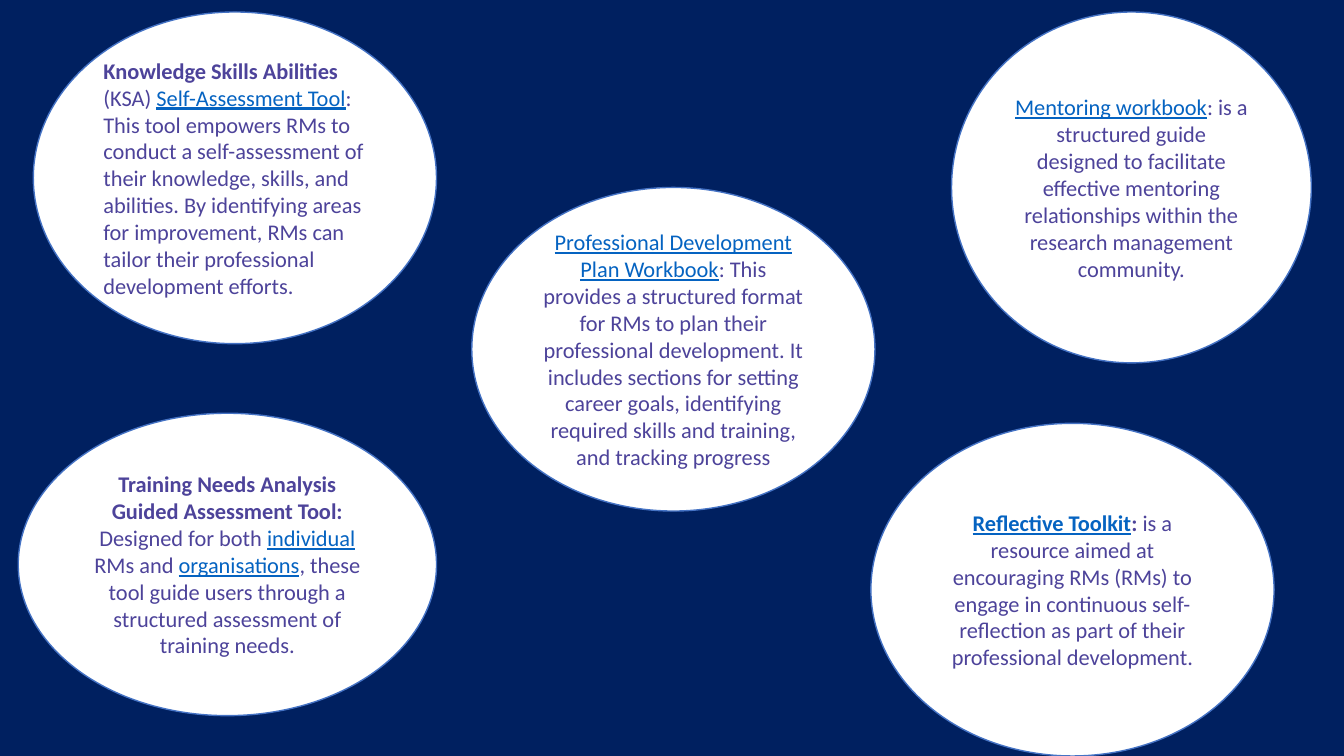
"""Build a slide of five ovals describing professional development tools."""
from dataclasses import dataclass

from pptx import Presentation
from pptx.dml.color import RGBColor
from pptx.enum.shapes import MSO_SHAPE
from pptx.enum.text import MSO_ANCHOR, PP_ALIGN
from pptx.slide import Slide
from pptx.util import Pt

NAVY = "002060"
WHITE = "FFFFFF"
OUTLINE = "4472C4"
PURPLE = "4D439A"
LINK_BLUE = "0563C1"


@dataclass(frozen=True)
class Span:
    text: str
    bold: bool = False
    link: bool = False


@dataclass(frozen=True)
class Oval:
    left: float
    top: float
    width: float
    height: float
    spans: tuple[Span, ...]
    align: PP_ALIGN = PP_ALIGN.CENTER
    space_before: float = 0
    margin_left: float = 7.2


OVALS = (
    Oval(23.8, 8.6, 288, 236.9, (
        Span("Knowledge Skills Abilities ", bold=True),
        Span("(KSA) "),
        Span("Self-Assessment Tool", link=True),
        Span(": This tool empowers RMs to conduct a self-assessment of their "
             "knowledge, skills, and abilities. By identifying areas for "
             "improvement, RMs can tailor their professional development efforts."),
    ), align=PP_ALIGN.LEFT, space_before=16.5, margin_left=7.9),
    Oval(13, 295.2, 298.8, 216, (
        Span("Training Needs Analysis Guided Assessment Tool: ", bold=True),
        Span("Designed for both "),
        Span("individual", link=True),
        Span(" RMs and "),
        Span("organisations", link=True),
        Span(", these tool guide users through a structured assessment of "
             "training needs."),
    )),
    Oval(337, 133.9, 288, 231.1, (
        Span("Professional Development Plan Workbook", link=True),
        Span(": This provides a structured format for RMs to plan their "
             "professional development. It includes sections for setting career "
             "goals, identifying required skills and training, and tracking "
             "progress"),
    )),
    Oval(679.7, 8.6, 257, 250.6, (
        Span("Mentoring workbook", link=True),
        Span(": is a structured guide designed to facilitate effective mentoring "
             "relationships within the research management community."),
    )),
    Oval(622.1, 302.4, 288, 237.6, (
        Span("Reflective Toolkit", bold=True, link=True),
        Span(": ", bold=True),
        Span("is a resource aimed at encouraging RMs (RMs) to engage in "
             "continuous self-reflection as part of their professional "
             "development."),
    )),
)


def color(value: str) -> RGBColor:
    return RGBColor.from_string(value)


def draw_oval(page: Slide, oval: Oval) -> None:
    shape = page.shapes.add_shape(MSO_SHAPE.OVAL, Pt(oval.left), Pt(oval.top),
                                  Pt(oval.width), Pt(oval.height))
    shape.shadow.inherit = False
    shape.fill.solid()
    shape.fill.fore_color.rgb = color(WHITE)
    shape.line.color.rgb = color(OUTLINE)
    shape.line.width = Pt(1)

    frame = shape.text_frame
    frame.word_wrap = True
    frame.vertical_anchor = MSO_ANCHOR.MIDDLE
    frame.margin_left = Pt(oval.margin_left)
    para = frame.paragraphs[0]
    para.alignment = oval.align
    para.space_before = Pt(oval.space_before)
    for span in oval.spans:
        run = para.add_run()
        run.text = span.text
        run.font.name = "Calibri"
        run.font.size = Pt(16)
        run.font.bold = span.bold
        run.font.underline = span.link
        run.font.color.rgb = color(LINK_BLUE if span.link else PURPLE)


def main() -> None:
    deck = Presentation()
    deck.slide_width = Pt(960)
    deck.slide_height = Pt(540)
    page = deck.slides.add_slide(deck.slide_layouts[6])
    page.background.fill.solid()
    page.background.fill.fore_color.rgb = color(NAVY)
    for oval in OVALS:
        draw_oval(page, oval)
    deck.save("out.pptx")


if __name__ == "__main__":
    main()
